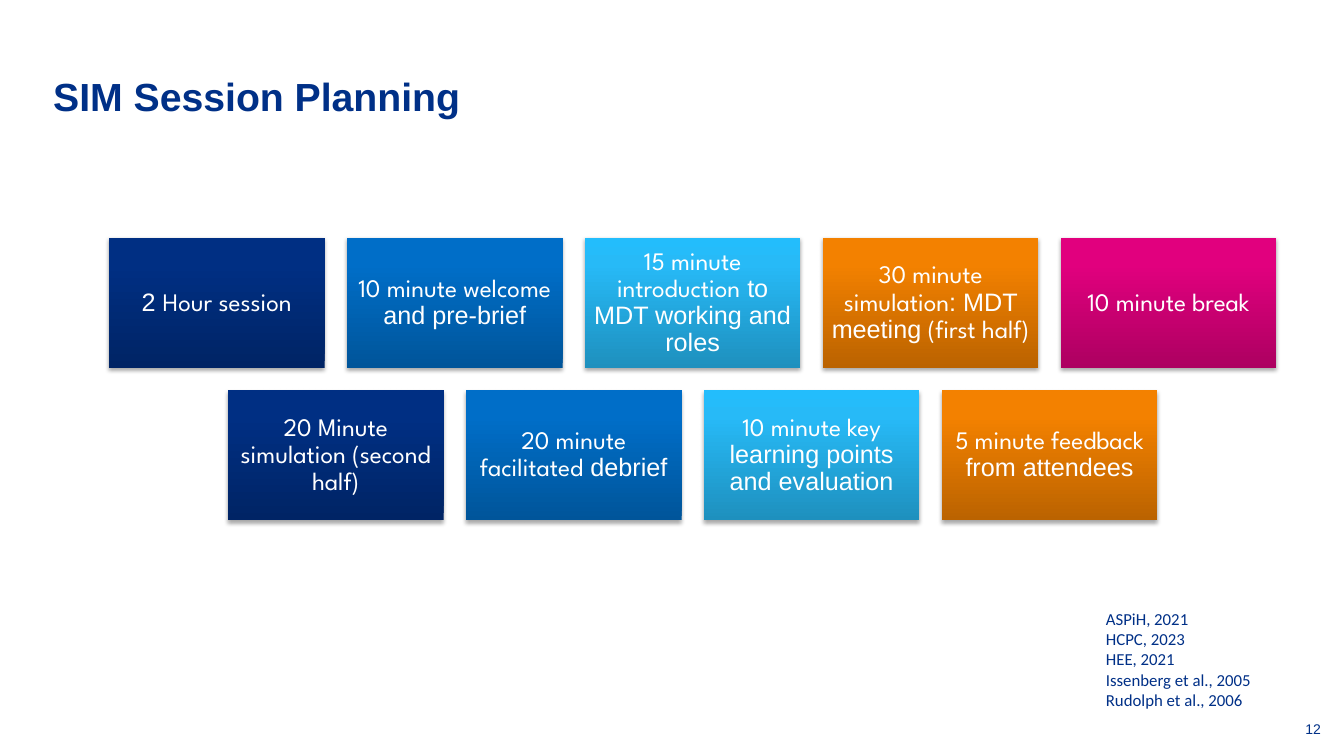
from copy import deepcopy

from lxml.etree import SubElement
from pptx import Presentation
from pptx.dml.color import RGBColor
from pptx.enum.shapes import MSO_SHAPE
from pptx.enum.text import MSO_ANCHOR, MSO_AUTO_SIZE, PP_ALIGN
from pptx.oxml.ns import qn
from pptx.util import Pt

PX = 9144
COLORS = {"navy": "003087", "white": "FFFFFF", "shadow": "000000"}
GRADIENTS = [
    ("002465", "002F83", "002F83"),
    ("00559A", "006EC8", "006FC9"),
    ("1E90BE", "27BAF7", "23BDFC"),
    ("BB6300", "F38100", "F48100"),
    ("AD0061", "E1007E", "E2007E"),
]
STOPS = (0, 0.8, 1)
SANS, SPARTAN = "Arial", "League Spartan"
ROWS = [
    [
        [("2 ", SANS), ("Hour session", SPARTAN)],
        [("10 minute welcome", SPARTAN), (" and pre‑brief", SANS)],
        [("15 minute introduction", SPARTAN), (" to MDT working and roles", SANS)],
        [("30 minute simulation", SPARTAN), (": MDT meeting", SANS), (" (first half)", SPARTAN)],
        [("10 minute break", SPARTAN)],
    ],
    [
        [("20 Minute simulation (second half)", SPARTAN)],
        [("20 minute facilitated", SPARTAN), (" debrief", SANS)],
        [("10 minute key", SPARTAN), (" learning points and evaluation", SANS)],
        [("5 minute feedback", SPARTAN), (" from attendees", SANS)],
    ],
]
REFERENCES = ["ASPiH, 2021", "HCPC, 2023", "HEE, 2021", "Issenberg et al., 2005", "Rudolph et al., 2006"]


def set_attrs(obj, **values):
    """Set each named attribute on an object."""
    for name, value in values.items():
        setattr(obj, name, value)


def add_run(p, text, color="navy", **font):
    """Add a run of text with its font values."""
    r = p.add_run()
    r.text = text
    set_attrs(r.font, **font)
    r.font.color.rgb = RGBColor.from_string(COLORS[color])


def add_text(slide, box, lines, font, align=PP_ALIGN.LEFT, **frame):
    """Add a text box with one paragraph per line."""
    tf = slide.shapes.add_textbox(*(v * PX for v in box)).text_frame
    set_attrs(tf, word_wrap=True, **frame)
    for i, line in enumerate(lines):
        p = tf.add_paragraph() if i else tf.paragraphs[0]
        p.alignment = align
        add_run(p, line, **font)


def add_shadow(sp):
    """Give a shape a soft shadow below it."""
    effects = sp._element.spPr.find(qn("a:effectLst"))
    shadow = SubElement(effects, qn("a:outerShdw"), blurRad="40000", dist="23000",
                        dir="5400000", rotWithShape="0")
    color = SubElement(shadow, qn("a:srgbClr"), val=COLORS["shadow"])
    SubElement(color, qn("a:alpha"), val="35000")


def fill_gradient(sp, colors):
    """Fill a shape with a three-stop gradient, darkest at the bottom."""
    sp.fill.gradient()
    sp.fill.gradient_angle = 90
    stops = sp._element.spPr.find(qn("a:gradFill")).find(qn("a:gsLst"))
    stops.append(deepcopy(stops[-1]))
    for stop, position, color in zip(sp.fill.gradient_stops, STOPS, colors):
        stop.position = position
        stop.color.rgb = RGBColor.from_string(color)


def add_step(slide, box, runs, colors):
    """Draw one step of the session as a shaded card."""
    sp = slide.shapes.add_shape(MSO_SHAPE.RECTANGLE, *(v * PX for v in box))
    sp.shadow.inherit = False
    sp.line.fill.background()
    fill_gradient(sp, colors)
    add_shadow(sp)
    tf = sp.text_frame
    set_attrs(tf, word_wrap=True, vertical_anchor=MSO_ANCHOR.MIDDLE,
              **{f"margin_{side}": 7 * PX for side in ("left", "top", "right", "bottom")})
    p = tf.paragraphs[0]
    set_attrs(p, alignment=PP_ALIGN.CENTER, line_spacing=0.9)
    for text, name in runs:
        add_run(p, text, "white", name=name, size=Pt(18))


def add_steps(slide, box, gap=22):
    """Lay the steps out in centred rows inside the box."""
    left, top, width, height = box
    most = max(map(len, ROWS))
    w = (width - gap * (most - 1)) // most
    h = (height - gap * (len(ROWS) - 1)) // len(ROWS)
    for i, row in enumerate(ROWS):
        x = left + (most - len(row)) * (w + gap) // 2
        y = top + i * (h + gap)
        for j, runs in enumerate(row):
            add_step(slide, (x + j * (w + gap), y, w, h), runs, GRADIENTS[j])


def main():
    """Build the session planning slide and save it."""
    prs = Presentation()
    set_attrs(prs, slide_width=1333 * PX, slide_height=750 * PX)
    slide = prs.slides.add_slide(prs.slide_layouts[6])
    add_text(slide, (43, 60, 854, 63), ["SIM Session Planning"],
             {"name": SANS, "size": Pt(28), "bold": True}, vertical_anchor=MSO_ANCHOR.BOTTOM)
    add_steps(slide, (108, 236, 1158, 280))
    add_text(slide, (1087, 599, 165, 111), REFERENCES, {"name": "Calibri", "size": Pt(12)},
             auto_size=MSO_AUTO_SIZE.SHAPE_TO_FIT_TEXT)
    add_text(slide, (1267, 710, 53, 40), ["12"], {"name": SANS, "size": Pt(10)}, PP_ALIGN.RIGHT)
    prs.save("out.pptx")


if __name__ == "__main__":
    main()
